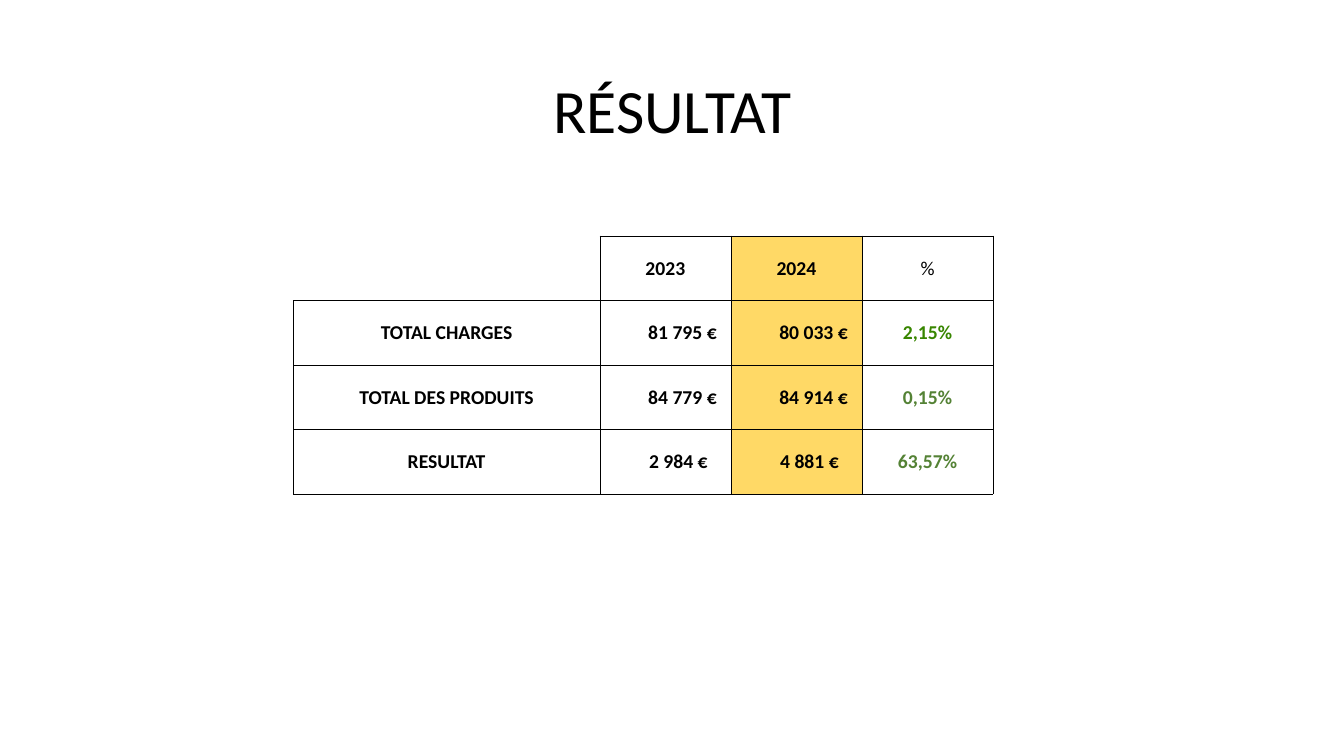
import dataclasses
import typing

import lxml.etree
import pptx
import pptx.dml.color
import pptx.enum.text
import pptx.oxml.ns
import pptx.util

Inches = pptx.util.Inches
Pt = pptx.util.Pt
RGBColor = pptx.dml.color.RGBColor
Align = pptx.enum.text.PP_ALIGN
Anchor = pptx.enum.text.MSO_ANCHOR

FONT = "Calibri"
BLACK = RGBColor(0x00, 0x00, 0x00)
WHITE = RGBColor(0xFF, 0xFF, 0xFF)
YELLOW = RGBColor(0xFF, 0xD9, 0x66)
BRIGHT_GREEN = RGBColor(0x38, 0x86, 0x00)
GREEN = RGBColor(0x54, 0x82, 0x35)

COLUMN_WIDTHS = (3.04, 1.3, 1.3, 1.3)
ROW_HEIGHT = 0.64
BORDER_WIDTH = Pt(0.5)
COLUMN_FILLS = (WHITE, WHITE, YELLOW, None)


@dataclasses.dataclass(frozen=True)
class ResultRow:
    label: str
    amount_2023: str
    amount_2024: str
    change: str
    change_color: RGBColor
    amount_inset: float


RESULT_ROWS = (
    ResultRow("TOTAL CHARGES", "81 795 €", "80 033 €", "2,15%", BRIGHT_GREEN, 0.14),
    ResultRow("TOTAL DES PRODUITS", "84 779 €", "84 914 €", "0,15%", GREEN, 0.14),
    ResultRow("RESULTAT", "2 984 €", "4 881 €", "63,57%", GREEN, 0.23),
)


def apply_format(target: typing.Any, values: dict[str, typing.Any]) -> None:
    for name, value in values.items():
        setattr(target, name, value)


def format_font(font: typing.Any, size: float, color: RGBColor, bold: bool) -> None:
    apply_format(font, {"name": FONT, "size": Pt(size), "bold": bold})
    font.color.rgb = color


def draw_borders(cell: typing.Any, visible: str) -> None:
    """Draw the sides named in visible (L, R, T, B) and hide the others."""
    qn = pptx.oxml.ns.qn
    properties = cell._tc.get_or_add_tcPr()
    for side in "LRTB":
        line = lxml.etree.SubElement(properties, qn(f"a:ln{side}"), w=str(BORDER_WIDTH))
        if side in visible:
            fill = lxml.etree.SubElement(line, qn("a:solidFill"))
            lxml.etree.SubElement(fill, qn("a:srgbClr"), val=str(BLACK))
        else:
            lxml.etree.SubElement(line, qn("a:noFill"))


def paint_cell(cell: typing.Any, fill: RGBColor | None, borders: str = "LRTB") -> None:
    draw_borders(cell, borders)
    if fill is None:
        cell.fill.background()
    else:
        cell.fill.solid()
        cell.fill.fore_color.rgb = fill


def write_cell(
    cell: typing.Any,
    text: str,
    color: RGBColor = BLACK,
    bold: bool = True,
    align: Align = Align.CENTER,
    right_inset: float = 0.01,
) -> None:
    apply_format(cell, {
        "text": text,
        "vertical_anchor": Anchor.MIDDLE,
        "margin_left": Inches(0.01),
        "margin_right": Inches(right_inset),
        "margin_top": Inches(0.01),
        "margin_bottom": 0,
    })
    paragraph = cell.text_frame.paragraphs[0]
    paragraph.alignment = align
    format_font(paragraph.runs[0].font, 14, color, bold)


def add_title(slide: typing.Any) -> None:
    title = slide.shapes.title
    apply_format(title, {
        "left": Inches(0.92),
        "top": Inches(0.4),
        "width": Inches(11.5),
        "height": Inches(1.45),
    })
    title.text_frame.text = "RÉSULTAT"
    title.text_frame.vertical_anchor = Anchor.MIDDLE
    paragraph = title.text_frame.paragraphs[0]
    apply_format(paragraph, {"alignment": Align.CENTER, "line_spacing": 0.9})
    format_font(paragraph.runs[0].font, 44, BLACK, False)


def add_result_table(slide: typing.Any) -> None:
    row_count = len(RESULT_ROWS) + 1
    table = slide.shapes.add_table(
        row_count, len(COLUMN_WIDTHS), Inches(2.91), Inches(2.34),
        Inches(sum(COLUMN_WIDTHS)), Inches(ROW_HEIGHT * row_count),
    ).table
    apply_format(table, {"first_row": False, "horz_banding": False})
    for column, width in zip(table.columns, COLUMN_WIDTHS):
        column.width = Inches(width)

    # Fills and borders; the corner cell stays open
    for row_index in range(row_count):
        for column_index, fill in enumerate(COLUMN_FILLS):
            cell = table.cell(row_index, column_index)
            if row_index == column_index == 0:
                paint_cell(cell, None, "RB")
            else:
                paint_cell(cell, fill)

    # Column headings
    for column_index, heading in enumerate(("2023", "2024", "%"), start=1):
        write_cell(table.cell(0, column_index), heading, bold=heading != "%")

    # Result rows
    for row_index, result in enumerate(RESULT_ROWS, start=1):
        write_cell(table.cell(row_index, 0), result.label)
        for column_index, amount in enumerate((result.amount_2023, result.amount_2024), start=1):
            write_cell(table.cell(row_index, column_index), amount,
                       align=Align.RIGHT, right_inset=result.amount_inset)
        write_cell(table.cell(row_index, 3), result.change, result.change_color)


def main() -> None:
    presentation = pptx.Presentation()
    apply_format(presentation, {"slide_width": Inches(13.33), "slide_height": Inches(7.5)})
    title_only = presentation.slide_layouts.get_by_name("Title Only")
    slide = presentation.slides.add_slide(title_only)
    add_title(slide)
    add_result_table(slide)
    presentation.save("out.pptx")


if __name__ == "__main__":
    main()
